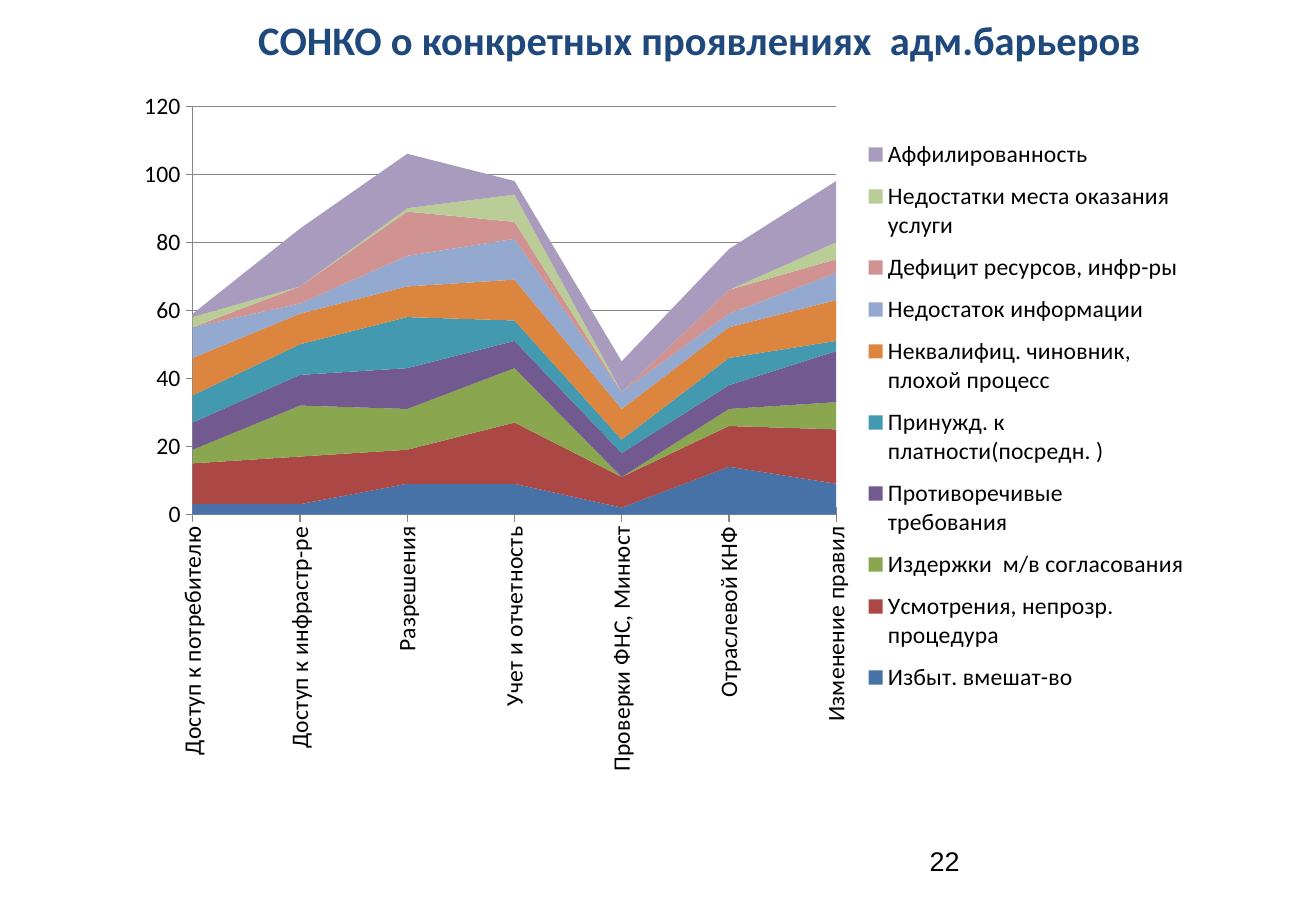
import pptx
import pptx.chart.data
import pptx.dml.color
import pptx.enum.chart
import pptx.enum.text
import pptx.oxml
import pptx.oxml.ns
import pptx.util
from pptx.util import Inches

# Content
TITLE = "СОНКО о конкретных проявлениях  адм.барьеров"
PAGE_NUMBER = "22"
CATEGORIES = [
    "Доступ к потребителю", "Доступ к инфрастр-ре", "Разрешения",
    "Учет и отчетность", "Проверки ФНС, Минюст", "Отраслевой КНФ",
    "Изменение правил",
]
SERIES = [  # name, values, colour
    ("Избыт. вмешат-во", (3, 3, 9, 9, 2, 14, 9), "blue"),
    ("Усмотрения, непрозр. процедура", (12, 14, 10, 18, 9, 12, 16), "red"),
    ("Издержки  м/в согласования", (4, 15, 12, 16, 0, 5, 8), "green"),
    ("Противоречивые требования", (8, 9, 12, 8, 7, 7, 15), "purple"),
    ("Принужд. к платности(посредн. )", (8, 9, 15, 6, 4, 8, 3), "teal"),
    ("Неквалифиц. чиновник, плохой процесс", (11, 9, 9, 12, 9, 9, 12), "orange"),
    ("Недостаток информации", (9, 3, 9, 12, 5, 4, 8), "light blue"),
    ("Дефицит ресурсов, инфр-ры", (0, 5, 13, 5, 0, 7, 4), "pink"),
    ("Недостатки места оказания услуги", (3, 0, 1, 8, 0, 0, 5), "light green"),
    ("Аффилированность", (1, 17, 16, 4, 9, 12, 18), "lilac"),
]
COLOURS = {
    "title": "1F497D", "text": "000000", "axis": "868686",
    "blue": "4672A8", "red": "AB4744", "green": "8AA64F",
    "purple": "725990", "teal": "4299B0", "orange": "DC853E",
    "light blue": "93A9CF", "pink": "D09392", "light green": "BACD96",
    "lilac": "A99BBD",
}


def colour(name):
    return pptx.dml.color.RGBColor.from_string(COLOURS[name])


def set_font(font, name, size, colour_name, bold=False):
    font.name = name
    font.size = pptx.util.Pt(size)
    font.bold = bold
    font.color.rgb = colour(colour_name)


def clear_margins(frame):
    frame.margin_left = frame.margin_right = 0
    frame.margin_top = frame.margin_bottom = 0
    frame.word_wrap = True


def set_layout(element, index, x, y, width, height, inner=False):
    """Place a chart part by fractions of the chart area."""
    for old in element.findall(pptx.oxml.ns.qn("c:layout")):
        element.remove(old)
    target = '<c:layoutTarget val="inner"/>' if inner else ""
    element.insert(index, pptx.oxml.parse_xml(
        f'<c:layout {pptx.oxml.ns.nsdecls("c")}><c:manualLayout>{target}'
        '<c:xMode val="edge"/><c:yMode val="edge"/>'
        f'<c:x val="{x}"/><c:y val="{y}"/><c:w val="{width}"/><c:h val="{height}"/>'
        '</c:manualLayout></c:layout>'))


presentation = pptx.Presentation()
presentation.slide_width = Inches(10.83)
presentation.slide_height = Inches(7.5)
slide = presentation.slides.add_slide(presentation.slide_layouts[5])

# Title
title = slide.shapes.title
title.left, title.top = Inches(0.67), Inches(0)
title.width, title.height = Inches(10.17), Inches(0.76)
frame = title.text_frame
frame.text = TITLE
clear_margins(frame)
frame.margin_top = Inches(0.12)
frame.vertical_anchor = pptx.enum.text.MSO_ANCHOR.TOP
paragraph = frame.paragraphs[0]
paragraph.alignment = pptx.enum.text.PP_ALIGN.CENTER
set_font(paragraph.font, "Calibri", 24, "title", bold=True)

# Stacked area chart
chart_data = pptx.chart.data.CategoryChartData()
chart_data.categories = CATEGORIES
for name, values, _ in SERIES:
    chart_data.add_series(name, values)
chart = slide.shapes.add_chart(
    pptx.enum.chart.XL_CHART_TYPE.AREA_STACKED,
    Inches(0.17), Inches(0.69), Inches(9.7), Inches(5.95), chart_data).chart
chart.has_title = False
set_font(chart.font, "Calibri", 14, "text")
for series, (_, _, colour_name) in zip(chart.plots[0].series, SERIES):
    series.format.fill.solid()
    series.format.fill.fore_color.rgb = colour(colour_name)
    series.format.line.fill.background()

# Axes
for axis in (chart.category_axis, chart.value_axis):
    axis.major_tick_mark = pptx.enum.chart.XL_TICK_MARK.CROSS
    axis.minor_tick_mark = pptx.enum.chart.XL_TICK_MARK.NONE
    axis.format.line.color.rgb = colour("axis")
    set_font(axis.tick_labels.font, "Calibri", 14, "text")
category_axis, value_axis = chart.category_axis, chart.value_axis
category_axis.has_major_gridlines = False
value_axis.has_major_gridlines = True
value_axis.major_gridlines.format.line.color.rgb = colour("axis")
value_axis.minimum_scale, value_axis.maximum_scale = 0, 120
value_axis.major_unit = 20

# Vertical category labels, areas starting on the value axis
label_body = next(category_axis._element.iter(pptx.oxml.ns.qn("a:bodyPr")))
label_body.set("rot", "-5400000")
label_body.set("vert", "horz")
for crossing in value_axis._element.iter(pptx.oxml.ns.qn("c:crossBetween")):
    crossing.set("val", "midCat")

# Legend and plot placement
chart.has_legend = True
legend = chart.legend
legend.position = pptx.enum.chart.XL_LEGEND_POSITION.RIGHT
legend.include_in_layout = False
set_font(legend.font, "Calibri", 14, "text")
set_layout(legend._element, 1, 0.72, 0.06, 0.27, 0.8)
plot_area = next(chart._chartSpace.iter(pptx.oxml.ns.qn("c:plotArea")))
set_layout(plot_area, 0, 0.146, 0.031, 0.546, 0.565, inner=True)

# Page number
page_box = slide.shapes.add_textbox(Inches(7.65), Inches(6.95), Inches(2.44), Inches(0.4))
page_box.text_frame.text = PAGE_NUMBER
clear_margins(page_box.text_frame)
set_font(page_box.text_frame.paragraphs[0].font, "Arial", 16, "text")

presentation.save("out.pptx")
